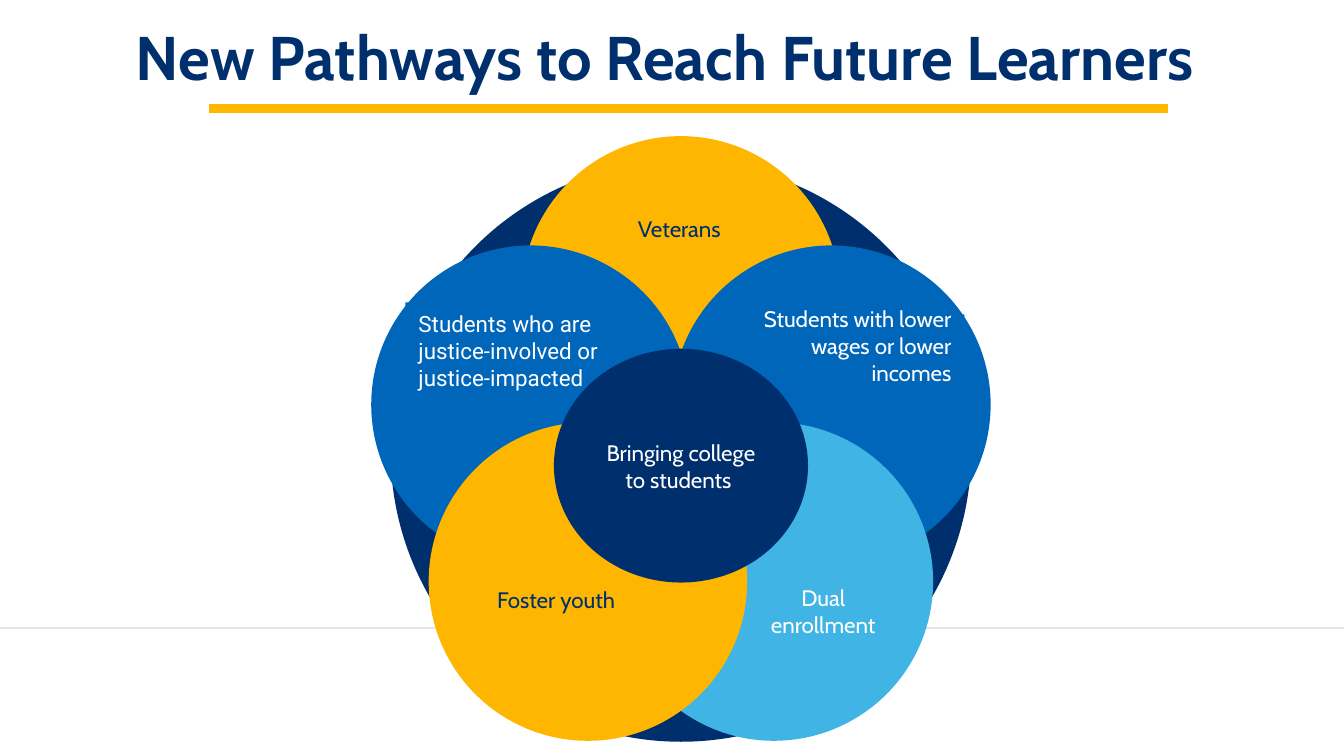
"""Build the slide on new pathways to reach future learners."""
from math import cos, radians, sin

from lxml.etree import SubElement
from pptx import Presentation
from pptx.dml.color import RGBColor
from pptx.enum.shapes import MSO_CONNECTOR, MSO_SHAPE
from pptx.enum.text import MSO_ANCHOR, PP_ALIGN
from pptx.oxml.ns import qn
from pptx.util import Pt

NAVY, BLUE, SKY, GOLD, WHITE, GREY = "002F6D", "0066BA", "40B4E5", "FFB600", "FFFFFF", "E3E5E5"
CENTER_X, CENTER_Y = 486.4, 324
ORBIT, PETAL = 113, 227.5
LABEL_INSET = 9.4


def color(value):
    return RGBColor.from_string(value)


class Flower:
    def __init__(self, slide):
        self.slide = slide
        self.font = {"name": "Cabin", "size": Pt(16), "bold": False}

    def rule(self, left, right, y, tint, weight):
        line = self.slide.shapes.add_connector(
            MSO_CONNECTOR.STRAIGHT, Pt(left), Pt(y), Pt(right), Pt(y))
        line.line.color.rgb = color(tint)
        line.line.width = Pt(weight)
        SubElement(line._element.spPr, qn("a:effectLst"))

    def shape(self, kind, box, fill, parent=None):
        form = (parent or self.slide).shapes.add_shape(kind, *map(Pt, box))
        form.shadow.inherit = False
        form.fill.solid()
        form.fill.fore_color.rgb = color(fill)
        form.line.fill.background()
        return form

    def disc(self, x, y, width, height, fill, parent=None):
        box = (x - width / 2, y - height / 2, width, height)
        return self.shape(MSO_SHAPE.OVAL, box, fill, parent)

    def label(self, holder, text, tint, insets, align=PP_ALIGN.CENTER,
              anchor=MSO_ANCHOR.MIDDLE, spacing=1.0, **changes):
        frame = holder.text_frame
        frame.word_wrap = True
        frame.vertical_anchor = anchor
        for side, inset in zip(("left", "top", "right", "bottom"), insets):
            setattr(frame, f"margin_{side}", Pt(inset))
        paragraph = frame.paragraphs[0]
        paragraph.alignment = align
        paragraph.line_spacing = spacing
        run = paragraph.add_run()
        run.text = text
        for name, value in {**self.font, **changes}.items():
            setattr(run.font, name, value)
        run.font.color.rgb = color(tint)

    def title(self, text, box):
        heading = self.slide.shapes.add_textbox(*map(Pt, box))
        self.label(heading, text, NAVY, (36, 36, 36, 3.6), anchor=MSO_ANCHOR.TOP,
                   spacing=0.9, size=Pt(44), bold=True)

    def petal(self, step, text, fill, tint, box, align=PP_ALIGN.CENTER,
              bottom=LABEL_INSET, **changes):
        angle = radians(72 * step)
        group = self.slide.shapes.add_group_shape()
        self.disc(CENTER_X + ORBIT * sin(angle), CENTER_Y - ORBIT * cos(angle),
                  PETAL, PETAL, fill, group)
        audience = self.shape(MSO_SHAPE.RECTANGLE, box, fill, group)
        self.label(audience, text, tint, (LABEL_INSET,) * 3 + (bottom,), align, **changes)


def main():
    deck = Presentation()
    deck.slide_width, deck.slide_height = Pt(960), Pt(540)
    flower = Flower(deck.slides.add_slide(deck.slide_layouts[6]))

    flower.rule(0, 960, 448.5, GREY, 1)
    flower.title("New Pathways to Reach Future Learners ", (0, -16.5, 960, 129.5))
    flower.rule(149.5, 834.5, 77.5, GOLD, 5.75)

    flower.disc(CENTER_X, 322.5, 414.7, 414.7, NAVY)
    flower.petal(0, "Veterans", GOLD, NAVY, (415.5, 129, 139.5, 69))
    flower.petal(1, "Students with lower wages or lower incomes", BLUE, WHITE,
                 (520.5, 224.5, 168.5, 63.5), PP_ALIGN.RIGHT, bottom=28.7)
    flower.petal(2, "Dual enrollment", SKY, WHITE, (526.5, 402, 123, 69))
    flower.petal(4, "Students who are justice-involved or justice-impacted", BLUE, WHITE,
                 (289.5, 216, 157, 69), PP_ALIGN.LEFT, name="Roboto")
    flower.petal(3, "Foster youth", GOLD, NAVY, (327.5, 394, 139.5, 69))

    core = flower.disc(CENTER_X, 332.6, 181.5, 167, NAVY)
    flower.label(core, "Bringing college to students ", WHITE, (LABEL_INSET,) * 4)

    deck.save("out.pptx")


if __name__ == "__main__":
    main()
